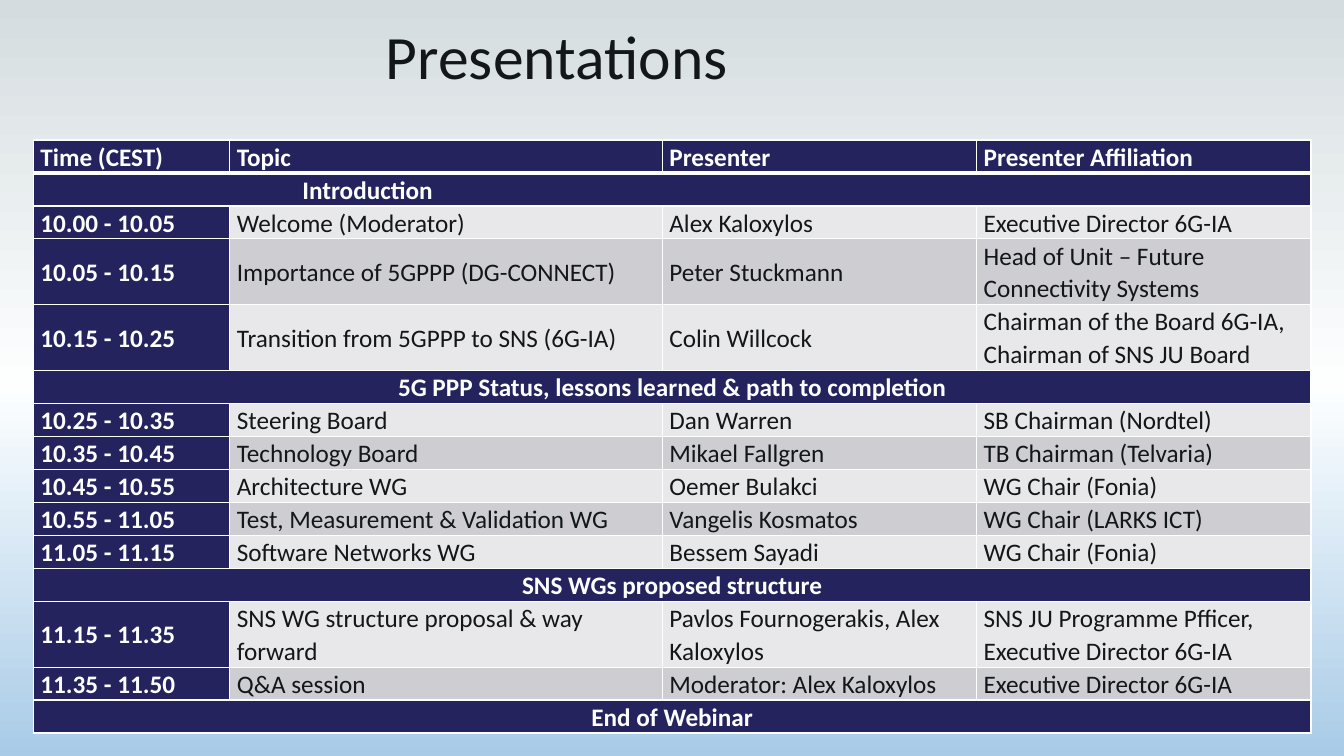
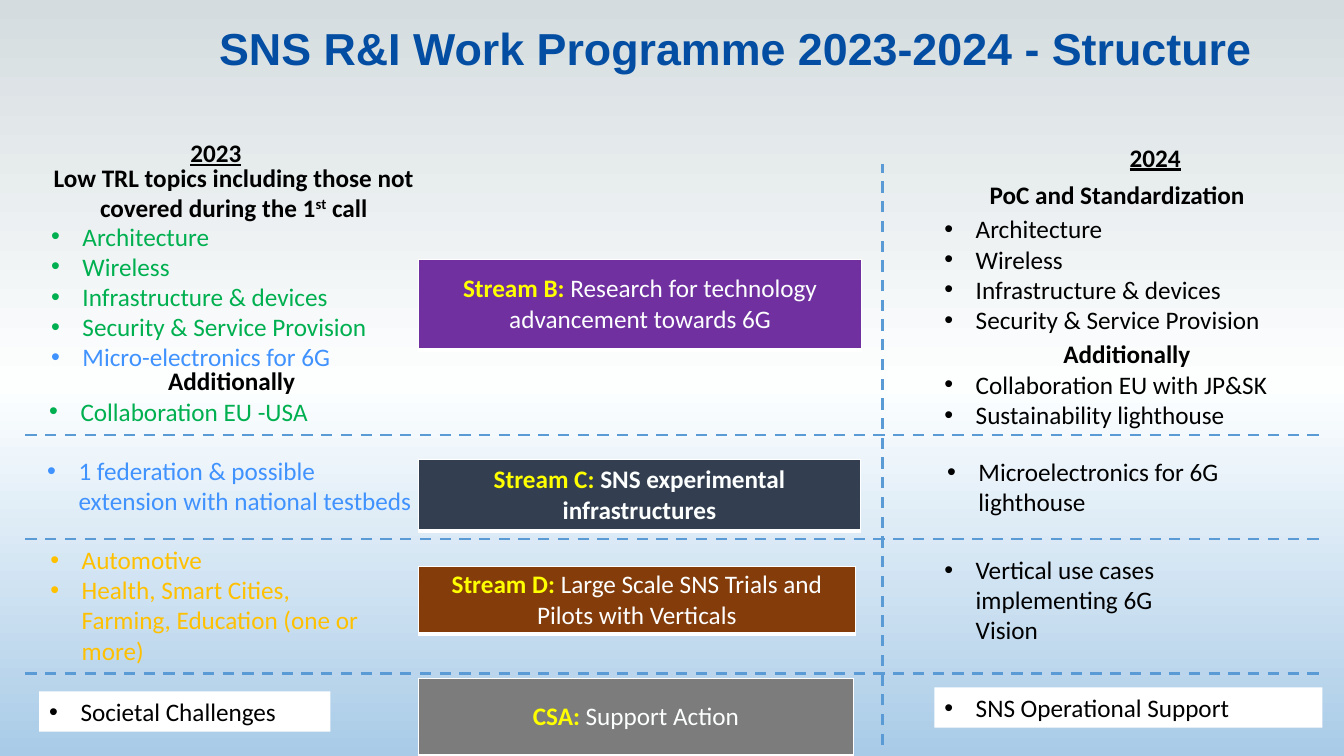
from copy import deepcopy
from dataclasses import dataclass

from lxml import etree
from pptx import Presentation
from pptx.dml.color import RGBColor
from pptx.enum.dml import MSO_LINE
from pptx.enum.shapes import MSO_CONNECTOR
from pptx.enum.text import MSO_ANCHOR, PP_ALIGN
from pptx.oxml.ns import qn
from pptx.util import Cm, Pt

LEFT, CENTER = PP_ALIGN.LEFT, PP_ALIGN.CENTER
TOP, MIDDLE = MSO_ANCHOR.TOP, MSO_ANCHOR.MIDDLE
DASH, STRAIGHT = MSO_LINE.DASH, MSO_CONNECTOR.STRAIGHT

COLORS = {
    "sky_top": "D5DCDF", "paper": "FDFFFF", "sky_bottom": "A9CBE7",
    "ink": "131719", "black": "000000", "white": "FFFFFF",
    "navy": "25235E", "light": "E8E8EA", "dark": "CDCDD2",
    "title": "034EA2", "divider": "5B9BD5", "label": "FFFF00",
    "green": "00B050", "blue": "4092FF", "amber": "FFC000",
    "purple": "7030A0", "slate": "333F50", "brown": "843C0B", "gray": "7C7C7C",
}
BODY_FONT, BODY_SIZE = "Calibri", 18
INDENT = Cm(0.79)
BORDERS = ("lnL", "lnR", "lnT", "lnB")

AGENDA_HEADER = ("Time (CEST)", "Topic", "Presenter", "Presenter Affiliation")
AGENDA_WIDTHS = (4.95, 10.9, 7.92, 8.43)
# A plain string is a section band; a tuple is one talk
AGENDA = [
    "Introduction",
    ("10.00 - 10.05", "Welcome (Moderator)", "Alex Kaloxylos", "Executive Director 6G-IA"),
    ("10.05 - 10.15", "Importance of 5GPPP (DG-CONNECT)", "Peter Stuckmann",
     "Head of Unit – Future Connectivity Systems"),
    ("10.15 - 10.25", "Transition from 5GPPP to SNS (6G-IA)", "Colin Willcock",
     "Chairman of the Board 6G-IA, Chairman of SNS JU Board"),
    "5G PPP Status, lessons learned & path to completion",
    ("10.25 - 10.35", "Steering Board", "Dan Warren", "SB Chairman (Nordtel)"),
    ("10.35 - 10.45", "Technology Board", "Mikael Fallgren", "TB Chairman (Telvaria)"),
    ("10.45 - 10.55", "Architecture WG", "Oemer Bulakci", "WG Chair (Fonia)"),
    ("10.55 - 11.05", "Test, Measurement & Validation WG", "Vangelis Kosmatos",
     "WG Chair (LARKS ICT)"),
    ("11.05 - 11.15", "Software Networks WG", "Bessem Sayadi", "WG Chair (Fonia)"),
    "SNS WGs proposed structure",
    ("11.15 - 11.35", "SNS WG structure proposal & way forward",
     "Pavlos Fournogerakis, Alex Kaloxylos",
     "SNS JU Programme Pfficer, Executive Director 6G-IA"),
    ("11.35 - 11.50", "Q&A session", "Moderator: Alex Kaloxylos", "Executive Director 6G-IA"),
    "End of Webinar",
]
TWO_LINE_AFFILIATION = 30


@dataclass
class Para:
    """One paragraph; text between ^ marks is superscript."""
    text: str
    color: str = "black"
    bold: bool = False
    bullet: bool = False
    underline: bool = False
    align: PP_ALIGN = LEFT
    size: int = BODY_SIZE
    font: str = BODY_FONT


def bullets(color, *texts):
    return [Para(text, color, bullet=True) for text in texts]


def heading(text, align=CENTER):
    return Para(text, bold=True, align=align)


def rgb(name):
    return RGBColor.from_string(COLORS[name])


def style_font(font, color, bold, size=BODY_SIZE, name=BODY_FONT):
    font.name, font.size, font.bold = name, Pt(size), bold
    font.color.rgb = rgb(color)


def set_background(master):
    fill = master.background.fill
    fill.gradient()
    stop_list = master.element.find(".//" + qn("a:gsLst"))
    stop_list.append(deepcopy(stop_list[-1]))
    stops = ((0, "sky_top"), (0.51, "paper"), (1, "sky_bottom"))
    for stop, (position, color) in zip(fill.gradient_stops, stops):
        stop.position = position
        stop.color.rgb = rgb(color)
    fill.gradient_angle = 270


def write_paragraph(paragraph, para):
    paragraph.alignment = para.align
    if para.bullet:
        props = paragraph._p.get_or_add_pPr()
        props.set("marL", str(INDENT))
        props.set("indent", str(-INDENT))
        etree.SubElement(props, qn("a:buFont")).set("typeface", "Arial")
        etree.SubElement(props, qn("a:buChar")).set("char", "•")
    for index, part in enumerate(para.text.split("^")):
        run = paragraph.add_run()
        run.text = part
        if index % 2:
            run._r.get_or_add_rPr().set("baseline", "30000")
    style_font(paragraph.font, para.color, para.bold, para.size, para.font)
    if para.underline:
        paragraph.font.underline = True


def add_text(slide, box, paras, fill=None, wrap=True):
    area = slide.shapes.add_textbox(*map(Cm, box))
    if fill:
        area.fill.solid()
        area.fill.fore_color.rgb = rgb(fill)
    frame = area.text_frame
    frame.word_wrap = wrap
    for index, para in enumerate(paras):
        paragraph = frame.add_paragraph() if index else frame.paragraphs[0]
        write_paragraph(paragraph, para)


def add_title(slide, box, text, color, size, font, bold):
    add_text(slide, box, [Para(text, color, bold, align=CENTER, size=size, font=font)])


def add_plain_table(slide, rows, box, widths):
    table = slide.shapes.add_table(rows, len(widths), *map(Cm, box)).table
    table.first_row = table.horz_banding = False
    for column, width in zip(table.columns, widths):
        column.width = Cm(width)
    return table


def style_cell(cell, fill, line, side_margin, anchor, thick=()):
    """Borders are 1 pt, except the sides listed as thick."""
    props = cell._tc.get_or_add_tcPr()
    for side in BORDERS:
        border = etree.SubElement(props, qn("a:" + side))
        border.set("w", str(Pt(3 if side in thick else 1)))
        solid = etree.SubElement(border, qn("a:solidFill"))
        etree.SubElement(solid, qn("a:srgbClr")).set("val", COLORS[line])
    cell.fill.solid()
    cell.fill.fore_color.rgb = rgb(fill)
    cell.margin_left = cell.margin_right = Cm(side_margin)
    cell.margin_top = cell.margin_bottom = 0
    cell.vertical_anchor = anchor


def agenda_table(slide, left, top, row_height):
    rows = [AGENDA_HEADER] + AGENDA
    box = (left, top, sum(AGENDA_WIDTHS), row_height * len(rows))
    table = add_plain_table(slide, len(rows), box, AGENDA_WIDTHS)
    band = 0
    for r, entry in enumerate(rows):
        is_section, is_header = isinstance(entry, str), r == 0
        two_lines = not is_section and len(entry[3]) > TWO_LINE_AFFILIATION
        table.rows[r].height = Cm(row_height * (2 if two_lines else 1))
        band = 0 if is_section or is_header else band + 1
        thick = {0: ("lnB",), 1: ("lnT",)}.get(r, ())
        texts = (entry, "", "", "") if is_section else entry
        for c, text in enumerate(texts):
            cell = table.cell(r, c)
            on_navy = is_section or is_header or c == 0
            fill = "navy" if on_navy else "light" if band % 2 else "dark"
            anchor = TOP if is_section or is_header else MIDDLE
            style_cell(cell, fill, "paper", 0.18, anchor, thick)
            if not text:
                continue
            paragraph = cell.text_frame.paragraphs[0]
            paragraph.line_spacing = 1.07
            write_paragraph(paragraph, Para(text, "paper" if on_navy else "ink", on_navy))
            if is_section and r > 1:
                paragraph.alignment = CENTER
            elif is_section:
                # The first section name is indented instead of centred
                paragraph._p.get_or_add_pPr().set("marL", str(Cm(6.6)))
        if is_section:
            table.cell(r, 0).merge(table.cell(r, 3))


def stream_box(slide, box, fill, label, text, bold=False):
    table = add_plain_table(slide, 1, box, [box[2]])
    cell = table.cell(0, 0)
    style_cell(cell, fill, "white", 0.15, MIDDLE, ("lnB",))
    paragraph = cell.text_frame.paragraphs[0]
    paragraph.alignment = CENTER
    for part, color, heavy in ((label + " ", "label", True), (text, "paper", bold)):
        run = paragraph.add_run()
        run.text = part
        style_font(run.font, color, heavy)


def year_column(slide, left, top, year, year_offset, blocks):
    """Each block is (dx, dy, width, height, paragraphs, fill)."""
    add_text(slide, (left + year_offset, top, 1.8, 1.02),
             [Para(year, bold=True, underline=True)], wrap=False)
    for dx, dy, width, height, paras, fill in blocks:
        add_text(slide, (left + dx, top + dy, width, height), paras, fill)


def divider(slide, x1, y1, x2, y2):
    line = slide.shapes.add_connector(STRAIGHT, *map(Cm, (x1, y1, x2, y2)))
    line.line.color.rgb = rgb("divider")
    line.line.width = Pt(2)
    line.line.dash_style = DASH
    etree.SubElement(line._element.spPr, qn("a:effectLst"))


def agenda_slide(slide):
    add_title(slide, (0, 0.33, 28.07, 1.8), "Presentations", "ink", 44, BODY_FONT, False)
    agenda_table(slide, 0.84, 3.53, 0.83)


def structure_slide(slide):
    # Streams in the middle
    for top, width, height, *content in (
        (6.53, 11.18, 2.29, "purple", "Stream B:",
         "Research for technology advancement towards 6G"),
        (11.58, 11.15, 1.8, "slate", "Stream C:", "SNS experimental infrastructures", True),
        (14.27, 11.02, 1.7, "brown", "Stream D:",
         "Large Scale SNS Trials and Pilots with Verticals"),
        (17.09, 10.97, 1.96, "gray", "CSA:", "Support Action"),
    ):
        stream_box(slide, (10.54, top, width, height), *content)

    # Calls of each year
    topics = ("Architecture", "Wireless", "Infrastructure & devices",
              "Security & Service Provision")
    year_column(slide, 0.99, 3.33, "2023", 3.56, [
        (0.05, 0.63, 9.7, 1.8,
         [heading("Low TRL topics including those not covered during the 1^st^ call")], None),
        (0.05, 2.11, 8.56, 4.11,
         bullets("green", *topics) + bullets("blue", "Micro-electronics for 6G"), None),
        (0, 5.76, 9.7, 1.8,
         [heading("Additionally")] + bullets("green", "Collaboration EU -USA"), None),
        (-0.05, 8.02, 9.8, 1.8,
         bullets("blue", "1 federation & possible extension with national testbeds"), None),
        (0.03, 10.26, 8.81, 3.33,
         bullets("amber", "Automotive",
                 "Health, Smart Cities, Farming, Education (one or more)"), None),
        (0, 14.09, 7.34, 1.02, bullets("black", "Societal Challenges"), "white"),
    ])
    year_column(slide, 23.55, 3.45, "2024", 4.67, [
        (1.14, 0.94, 8.5, 1.02, [heading("PoC and Standardization", LEFT)], None),
        (0, 1.81, 10.3, 3.33, bullets("black", *topics), None),
        (0, 4.96, 9.7, 2.57,
         [heading("Additionally")] + bullets("black", "Collaboration EU with JP&SK",
                                             "Sustainability lighthouse"), None),
        (0.07, 7.93, 10.1, 1.8, bullets("black", "Microelectronics for 6G lighthouse"), None),
        (0, 10.39, 7.32, 2.57,
         bullets("black", "Vertical use cases implementing 6G Vision"), None),
        (0, 13.87, 9.78, 1.02, bullets("black", "SNS Operational Support"), "white"),
    ])

    # Dashed dividers
    for y in (10.96, 13.58, 16.98):
        divider(slide, 0.64, y, 33.3, y)
    divider(slide, 22.23, 18.77, 22.23, 4.14)

    add_title(slide, (3.94, 0.41, 29.21, 2.18),
              "SNS R&I Work Programme 2023-2024 - Structure", "title", 32, "Arial", True)


def main():
    prs = Presentation()
    prs.slide_width, prs.slide_height = Cm(33.87), Cm(19.05)
    set_background(prs.slide_master)
    for build in (agenda_slide, structure_slide):
        build(prs.slides.add_slide(prs.slide_layouts[6]))
    prs.save("out.pptx")


if __name__ == "__main__":
    main()
